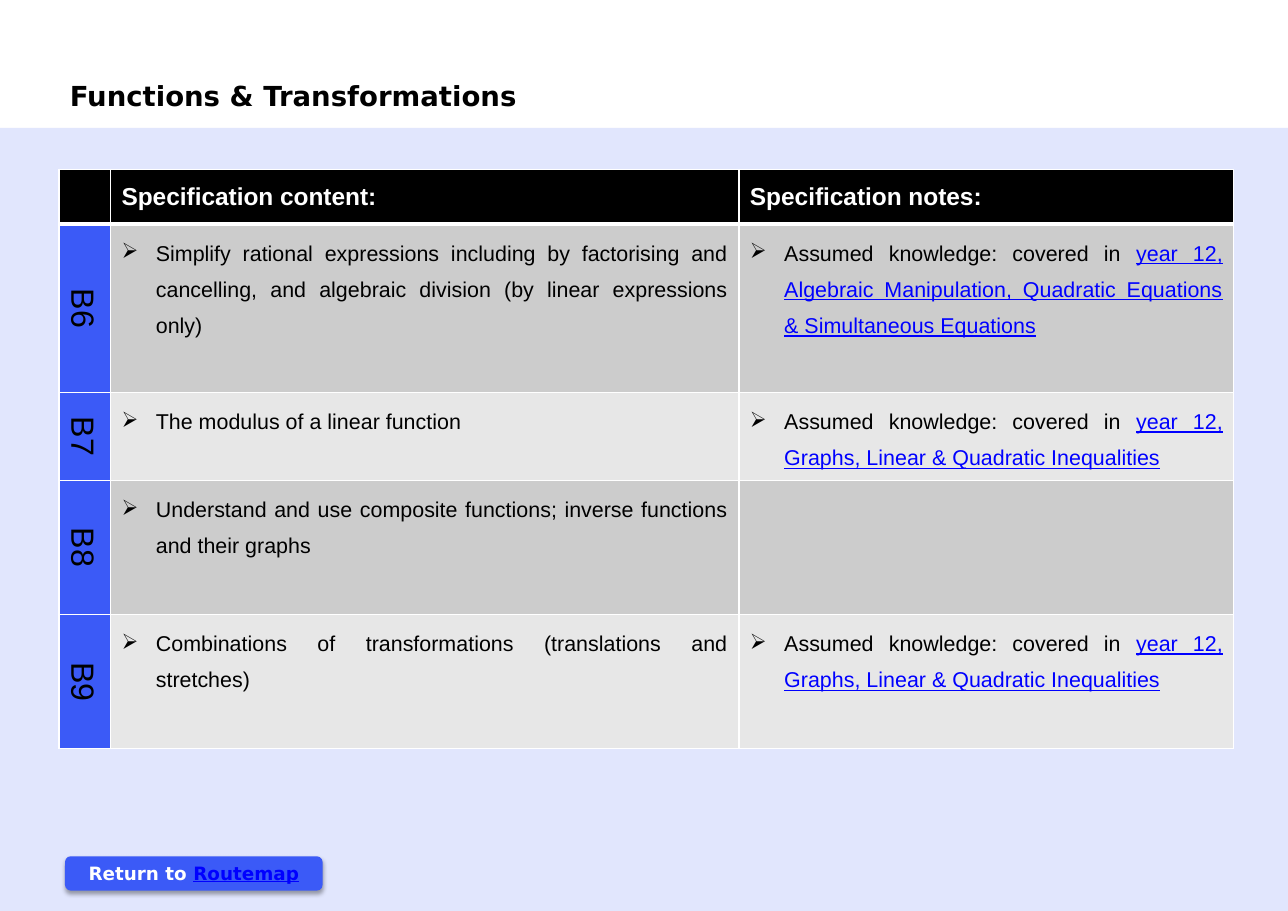
from dataclasses import dataclass

from pptx import Presentation
from pptx.dml.color import RGBColor as Rgb
from pptx.enum.shapes import MSO_SHAPE as Kind
from pptx.enum.text import MSO_ANCHOR as Anchor, PP_ALIGN as Align
from pptx.oxml import parse_xml as to_xml
from pptx.oxml.ns import nsdecls, qn
from pptx.util import Cm, Pt


@dataclass
class Theme:
    blue: str = "3B5AF7"
    black: str = "000000"
    white: str = "FFFFFF"
    link: str = "0000FF"
    dark: str = "CCCCCC"
    light: str = "E7E7E7"
    sans: str = "Arial"
    wide: str = "DejaVu Sans"
    title: int = 18
    head: int = 16
    code: int = 21
    body: int = 14
    button: int = 12


look = Theme()


def style(run, size, color, face=look.sans, bold=False, line=False):
    font = run.font
    font.size = Pt(size)
    font.name = face
    font.bold = bold
    font.underline = line
    font.color.rgb = Rgb.from_string(color)


def paint(cell, color, top, base):
    cell.fill.solid()
    cell.fill.fore_color.rgb = Rgb.from_string(color)
    props = cell._tc.get_or_add_tcPr()
    sides = (("L", 1), ("R", 1), ("T", top), ("B", base))
    for spot, (side, width) in enumerate(sides):
        props.insert(spot, to_xml(
            f'<a:ln{side} {nsdecls("a")} w="{Pt(width)}"><a:solidFill>'
            f'<a:srgbClr val="{look.white}"/></a:solidFill></a:ln{side}>'))


deck = Presentation()
deck.slide_width = Cm(29.7)
deck.slide_height = Cm(21)
slide = deck.slides.add_slide(deck.slide_layouts[6])
shapes = slide.shapes

panel = shapes.add_shape(Kind.RECTANGLE, 0, Cm(2.95), Cm(29.7), Cm(18.05))
button = shapes.add_shape(Kind.ROUNDED_RECTANGLE, Cm(1.5), Cm(19.74), Cm(5.94), Cm(0.79))
for shape in (panel, button):
    shape.shadow.inherit = False
    shape.fill.solid()
    shape.fill.fore_color.rgb = Rgb.from_string(look.blue)
    shape.line.fill.background()

tint = panel._element.spPr.find(".//" + qn("a:srgbClr"))
tint.append(to_xml(f'<a:alpha {nsdecls("a")} val="15000"/>'))

glow = button._element.spPr.find(qn("a:effectLst"))
glow.append(to_xml(
    f'<a:outerShdw {nsdecls("a")} blurRad="{Pt(3.1)}" dist="{Pt(1.8)}" dir="5400000" '
    f'rotWithShape="0"><a:srgbClr val="{look.black}"><a:alpha val="35000"/>'
    '</a:srgbClr></a:outerShdw>'))

frame = button.text_frame
frame.vertical_anchor = Anchor.MIDDLE
frame.margin_top = frame.margin_bottom = 0
para = frame.paragraphs[0]
para.alignment = Align.CENTER
for text, color, line in (("Return to ", look.white, False), ("Routemap", look.link, True)):
    run = para.add_run()
    run.text = text
    style(run, look.button, color, look.wide, True, line)

known = "Assumed knowledge: covered in "
graphs = "year 12, Graphs, Linear & Quadratic Inequalities"
topics = [
    ("B6", 3.88, "Simplify rational expressions including by factorising and cancelling, "
     "and algebraic division (by linear expressions only)",
     "year 12, Algebraic Manipulation, Quadratic Equations & Simultaneous Equations"),
    ("B7", 2.03, "The modulus of a linear function", graphs),
    ("B8", 3.09, "Understand and use composite functions; inverse functions and their graphs", ""),
    ("B9", 3.09, "Combinations of transformations (translations and stretches)", graphs),
]
heads = ["", "Specification content:", "Specification notes:"]

table = shapes.add_table(len(topics) + 1, 3, Cm(1.36), Cm(3.9), Cm(27.09), Cm(13.36)).table
for col, width in zip(table.columns, (1.19, 14.49, 11.41)):
    col.width = Cm(width)

table.rows[0].height = Cm(1.27)
for cell, text in zip(table.rows[0].cells, heads):
    paint(cell, look.black, 1, 3)
    cell.vertical_anchor = Anchor.MIDDLE
    if text:
        cell.text_frame.text = text
        style(cell.text_frame.paragraphs[0].runs[0], look.head, look.white, bold=True)

for num, (code, height, goal, link) in enumerate(topics, 1):
    row = table.rows[num]
    row.height = Cm(height)
    label, *rest = row.cells
    top = 3 if num == 1 else 1

    paint(label, look.blue, top, 1)
    label._tc.get_or_add_tcPr().set("vert", "vert")
    label.text_frame.text = code
    para = label.text_frame.paragraphs[0]
    para.alignment = Align.CENTER
    style(para.runs[0], look.code, look.black)

    notes = [(known, look.black, False), (link, look.link, True)] if link else []
    for cell, parts in zip(rest, ([(goal, look.black, False)], notes)):
        paint(cell, look.dark if num % 2 else look.light, top, 1)
        if not parts:
            continue
        para = cell.text_frame.paragraphs[0]
        props = para._p.get_or_add_pPr()
        props.set("marL", str(Cm(0.79)))
        props.set("indent", str(-Cm(0.79)))
        props.append(to_xml(f'<a:buChar {nsdecls("a")} char="➢"/>'))
        para.alignment = Align.JUSTIFY
        para.line_spacing = 1.5
        for text, color, line in parts:
            run = para.add_run()
            run.text = text
            style(run, look.body, color, line=line)

title = shapes.add_textbox(Cm(1.36), Cm(1.7), Cm(10.95), Cm(1.03))
title.text_frame.word_wrap = False
title.text_frame.text = "Functions & Transformations"
style(title.text_frame.paragraphs[0].runs[0], look.title, look.black, look.wide, True)

deck.save("out.pptx")
